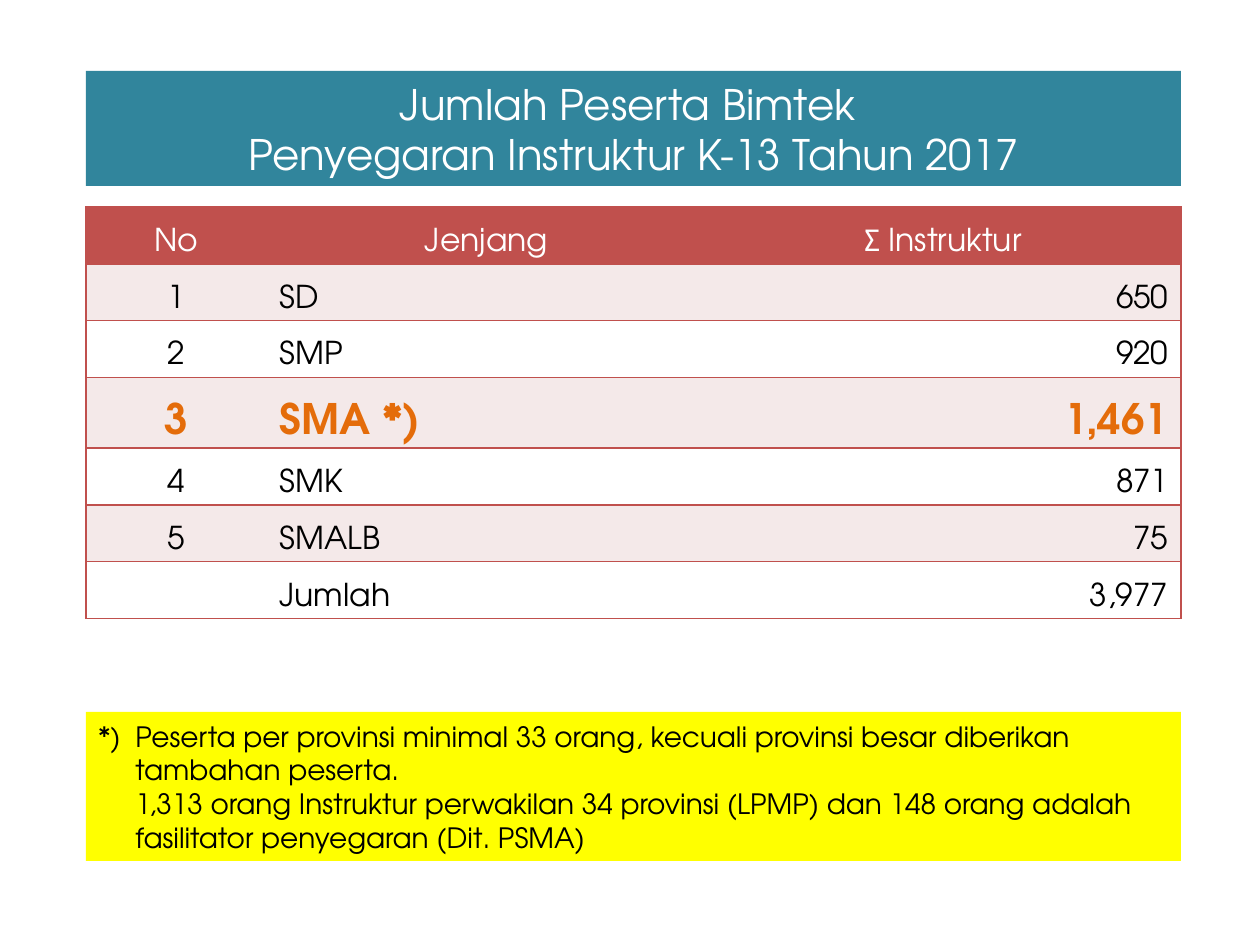
from dataclasses import dataclass

from lxml import etree
from pptx import Presentation
from pptx.dml.color import RGBColor
from pptx.enum.shapes import MSO_SHAPE
from pptx.enum.text import MSO_ANCHOR, PP_ALIGN
from pptx.oxml.ns import qn
from pptx.slide import Slide
from pptx.table import _Cell
from pptx.text.text import TextFrame
from pptx.util import Emu, Pt

RECTANGLE = MSO_SHAPE.RECTANGLE
LEFT, CENTER, RIGHT = PP_ALIGN.LEFT, PP_ALIGN.CENTER, PP_ALIGN.RIGHT
BOTTOM, MIDDLE = MSO_ANCHOR.BOTTOM, MSO_ANCHOR.MIDDLE
PX_PER_INCH = 126
EDGE, WIDTH = 86, 1095
TABLE_TOP, ROW_HEIGHT = 207, 52
COLUMN_WIDTHS = (181, 439, 475)
COLUMN_ALIGNS = (CENTER, LEFT, RIGHT)


@dataclass(frozen=True)
class Theme:
    font: str = "TeX Gyre Adventor"
    teal: str = "31859C"
    red: str = "C0504D"
    band: str = "F4E9E9"
    white: str = "FFFFFF"
    black: str = "000000"
    orange: str = "E46C0A"
    yellow: str = "FFFF00"
    large: int = 24
    body: int = 18
    note: int = 16
    rule: int = 1


@dataclass(frozen=True)
class Panel:
    top: int
    height: int
    fill: str
    lines: tuple[str, ...]
    size: int
    color: str
    align: PP_ALIGN
    hanging: int = 0


@dataclass(frozen=True)
class Level:
    number: str
    name: str
    instructors: str
    highlighted: bool = False


THEME = Theme()
PANELS = (
    Panel(71, 115, THEME.teal,
          ("Jumlah Peserta Bimtek ", "Penyegaran Instruktur K-13 Tahun 2017"),
          THEME.large, THEME.white, CENTER),
    Panel(712, 149, THEME.yellow,
          ("*) \tPeserta per provinsi minimal 33 orang, kecuali provinsi besar "
           "diberikan tambahan peserta.",
           "\t1,313 orang Instruktur perwakilan 34 provinsi (LPMP) dan 148 orang "
           "adalah fasilitator penyegaran (Dit. PSMA)"),
          THEME.note, THEME.black, LEFT, hanging=37),
)
HEADINGS = ("No", "Jenjang", "Σ Instruktur")
LEVELS = (
    Level("1", "SD", "650"),
    Level("2", "SMP", "920"),
    Level("3", "SMA *)", "1,461", highlighted=True),
    Level("4", "SMK", "871"),
    Level("5", "SMALB", "75"),
    Level("", "Jumlah", "3,977"),
)


def px(length: int) -> Emu:
    return Emu(round(length * 914400 / PX_PER_INCH))


def rgb(color: str) -> RGBColor:
    return RGBColor.from_string(color)


def write(frame: TextFrame, *lines: str, size: int, color: str, align: PP_ALIGN,
          anchor: MSO_ANCHOR = MIDDLE, bold: bool = False,
          spacing: float = 1.0, hanging: int = 0) -> None:
    frame.word_wrap = True
    frame.vertical_anchor = anchor
    for index, line in enumerate(lines):
        paragraph = frame.add_paragraph() if index else frame.paragraphs[0]
        paragraph.alignment = align
        paragraph.line_spacing = spacing
        paragraph.font.size = Pt(size)
        if hanging:
            properties = paragraph._p.get_or_add_pPr()
            properties.set("marL", str(px(hanging)))
            properties.set("indent", str(-px(hanging)))
        if line:
            run = paragraph.add_run()
            run.text = line
            run.font.name = THEME.font
            run.font.size = Pt(size)
            run.font.bold = bold
            run.font.color.rgb = rgb(color)


def draw_panel(slide: Slide, panel: Panel) -> None:
    box = slide.shapes.add_shape(
        RECTANGLE, px(EDGE), px(panel.top), px(WIDTH), px(panel.height))
    box.shadow.inherit = False
    box.fill.solid()
    box.fill.fore_color.rgb = rgb(panel.fill)
    box.line.fill.background()
    write(box.text_frame, *panel.lines, size=panel.size, color=panel.color,
          align=panel.align, hanging=panel.hanging)


def set_borders(cell: _Cell, ruled_sides: str) -> None:
    properties = cell._tc.get_or_add_tcPr()
    for side in "LRTB":
        border = etree.SubElement(properties, qn(f"a:ln{side}"))
        if side in ruled_sides:
            border.set("w", str(Pt(THEME.rule)))
            fill = etree.SubElement(border, qn("a:solidFill"))
            etree.SubElement(fill, qn("a:srgbClr"), val=THEME.red)
        else:
            etree.SubElement(border, qn("a:noFill"))


def draw_row(cells: list[_Cell], texts: tuple[str, ...],
             aligns: tuple[PP_ALIGN, ...], *, fill: str, color: str,
             size: int = THEME.body, bold: bool = False) -> None:
    for cell, text, align, sides in zip(cells, texts, aligns, ("LTB", "TB", "RTB")):
        set_borders(cell, sides)
        cell.fill.solid()
        cell.fill.fore_color.rgb = rgb(fill)
        cell.vertical_anchor = BOTTOM
        write(cell.text_frame, text, size=size, color=color, align=align,
              anchor=BOTTOM, bold=bold, spacing=1.5)


def draw_levels(slide: Slide) -> None:
    row_count = len(LEVELS) + 1
    table = slide.shapes.add_table(
        row_count, len(HEADINGS), px(EDGE), px(TABLE_TOP),
        px(WIDTH), px(ROW_HEIGHT * row_count)).table
    table.horz_banding = False
    for column, width in zip(table.columns, COLUMN_WIDTHS):
        column.width = px(width)
    heading_row, *level_rows = table.rows
    draw_row(list(heading_row.cells), HEADINGS, (CENTER,) * len(HEADINGS),
             fill=THEME.red, color=THEME.white)
    for index, (row, level) in enumerate(zip(level_rows, LEVELS)):
        draw_row(list(row.cells), (level.number, level.name, level.instructors),
                 COLUMN_ALIGNS,
                 fill=THEME.white if index % 2 else THEME.band,
                 color=THEME.orange if level.highlighted else THEME.black,
                 size=THEME.large if level.highlighted else THEME.body,
                 bold=level.highlighted)


def main() -> None:
    deck = Presentation()
    deck.slide_width, deck.slide_height = px(1260), px(945)
    slide = deck.slides.add_slide(deck.slide_layouts[6])
    heading, footnote = PANELS
    draw_panel(slide, heading)
    draw_levels(slide)
    draw_panel(slide, footnote)
    deck.save("out.pptx")


if __name__ == "__main__":
    main()
